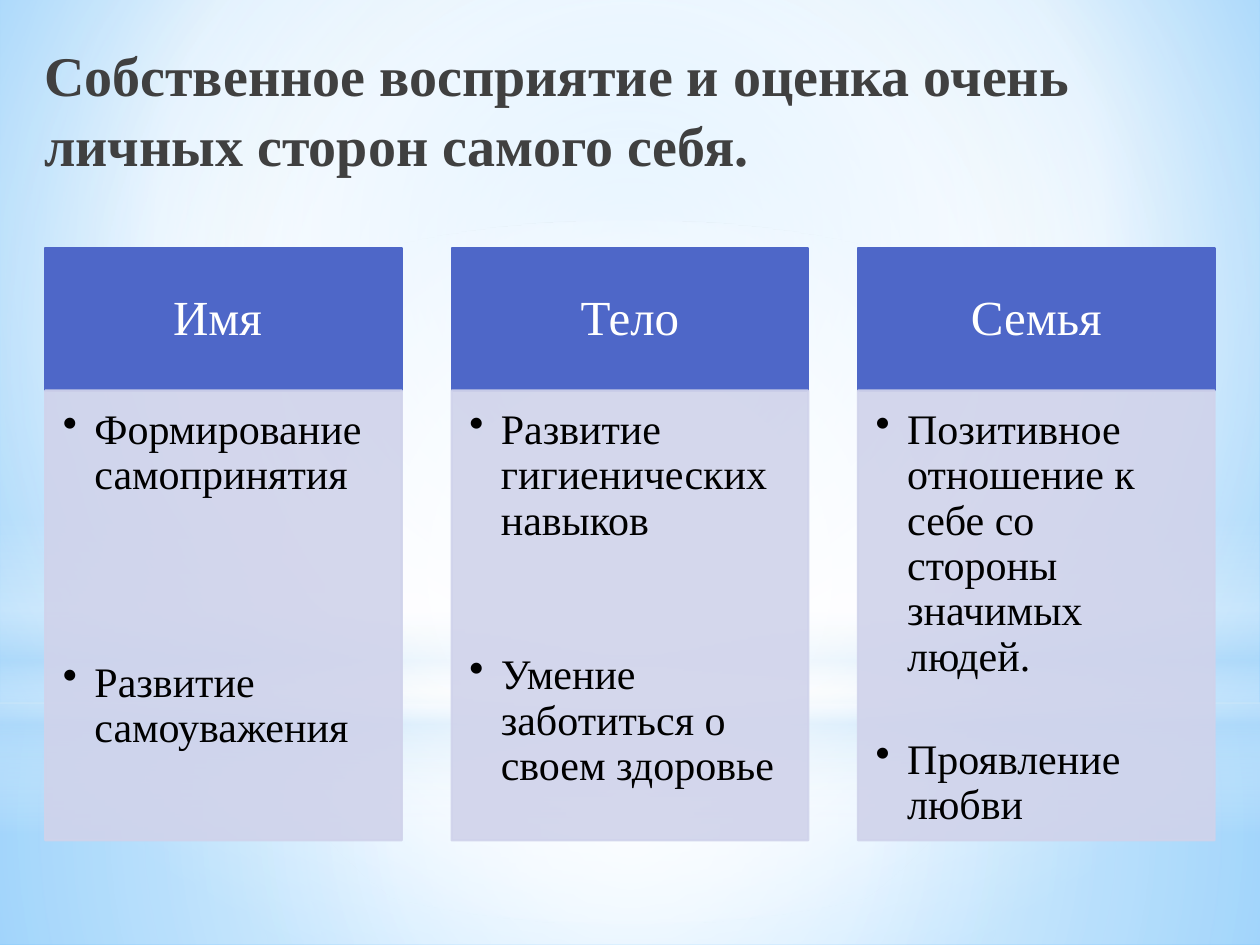
from dataclasses import dataclass

from lxml import etree
from pptx import Presentation
from pptx.dml.color import RGBColor
from pptx.enum.shapes import MSO_SHAPE
from pptx.enum.text import MSO_ANCHOR, PP_ALIGN
from pptx.oxml.ns import qn
from pptx.util import Inches, Pt

RECT, OVAL = MSO_SHAPE.RECTANGLE, MSO_SHAPE.OVAL
TOP, MIDDLE = MSO_ANCHOR.TOP, MSO_ANCHOR.MIDDLE
LEFT, CENTER = PP_ALIGN.LEFT, PP_ALIGN.CENTER


@dataclass
class Theme:
    font: str = "Times New Roman"
    title: str = "404040"
    header: str = "4E67C8"
    panel: str = "D0D3EB"
    white: str = "FFFFFF"
    black: str = "000000"
    mist: str = "B4DCFA"
    sky: str = "9ED5FF"
    deep_sky: str = "5BB9FF"
    title_size: int = 32
    header_size: int = 28
    body_size: int = 24
    panel_alpha: int = 90


def sub(parent, tag, **attrs):
    """Add a drawing element with the given attributes."""
    el = etree.SubElement(parent, qn(tag))
    for name, value in attrs.items():
        el.set(name, str(value))
    return el


def set_alpha(color, percent):
    sub(color, "a:alpha", val=percent * 1000)


def set_gradient(props, stops, focus=None):
    """Turn a solid fill into a circular (focus given) or vertical gradient."""
    solid = props.find(qn("a:solidFill"))
    grad = etree.Element(qn("a:gradFill"), rotWithShape="1")
    gs_list = sub(grad, "a:gsLst")
    for pos, color, alpha in stops:
        gs = sub(gs_list, "a:gs", pos=pos * 1000)
        set_alpha(sub(gs, "a:srgbClr", val=color), alpha)
    if focus:
        circle = sub(grad, "a:path", path="circle")
        sides = {side: pct * 1000 for side, pct in zip("ltrb", focus)}
        sub(circle, "a:fillToRect", **sides)
    else:
        sub(grad, "a:lin", ang=90 * 60000, scaled=0)
    props.replace(solid, grad)


class SlideBuilder:
    def __init__(self, slide, theme):
        self.s = slide
        self.th = theme

    def background(self, stops, focus):
        self.s.background.fill.solid()
        set_gradient(self.s.element.find(".//" + qn("p:bgPr")), stops, focus)

    def shape(self, kind, box, color):
        sp = self.s.shapes.add_shape(kind, *map(Inches, box))
        sp.shadow.inherit = False
        sp.fill.solid()
        sp.fill.fore_color.rgb = RGBColor.from_string(color)
        return sp

    def glow(self, kind, box, stops, focus=None):
        sp = self.shape(kind, box, self.th.white)
        sp.line.fill.background()
        set_gradient(sp.element.spPr, stops, focus)

    def panel(self, box, color, alpha=100):
        sp = self.shape(RECT, box, color)
        sp.line.color.rgb = RGBColor.from_string(color)
        sp.line.width = Pt(1.25)
        if alpha < 100:
            for clr in sp.element.spPr.iter(qn("a:srgbClr")):
                set_alpha(clr, alpha)
        return sp

    def frame(self, sp, insets, anchor=TOP):
        tf = sp.text_frame
        sides = ("margin_left", "margin_top", "margin_right", "margin_bottom")
        fmt = dict(zip(sides, map(Inches, insets)))
        fmt.update(word_wrap=True, vertical_anchor=anchor)
        for name, value in fmt.items():
            setattr(tf, name, value)
        return tf

    def add_text(self, p, text, size, color, bold=False, bullet=False, **fmt):
        if bullet:
            pPr = p._p.get_or_add_pPr()
            pPr.set("marL", str(Inches(0.25)))
            pPr.set("indent", str(-Inches(0.25)))
            sub(pPr, "a:buChar", char="•")
        for name, value in fmt.items():
            setattr(p, name, value)
        r = p.add_run()
        r.text = text
        font = {"name": self.th.font, "size": Pt(size), "bold": bold}
        for name, value in font.items():
            setattr(r.font, name, value)
        r.font.color.rgb = RGBColor.from_string(color)

    def title(self, box, text):
        tb = self.s.shapes.add_textbox(*map(Inches, box))
        tf = self.frame(tb, (0.15, 0.09, 0.1, 0.05))
        self.add_text(tf.paragraphs[0], text, self.th.title_size, self.th.title,
                      bold=True, alignment=LEFT, line_spacing=1.04)

    def header(self, box, text):
        sp = self.panel(box, self.th.header)
        tf = self.frame(sp, (0.22, 0.12, 0.22, 0.12), MIDDLE)
        self.add_text(tf.paragraphs[0], text, self.th.header_size,
                      self.th.white, alignment=CENTER, line_spacing=0.9)

    def bullets(self, box, items, gap):
        sp = self.panel(box, self.th.panel, self.th.panel_alpha)
        tf = self.frame(sp, (0.14, 0.14, 0.19, 0.21))
        for i, text in enumerate(items):
            p = tf.add_paragraph() if i else tf.paragraphs[0]
            self.add_text(p, text, self.th.body_size, self.th.black,
                          bullet=True, alignment=LEFT, line_spacing=0.9,
                          space_before=Pt(gap if i else 0))


# Heading, bullets, space between the bullets in points
COLUMNS = [
    ("Имя ", ["Формирование самопринятия", "Развитие самоуважения"], 92.5),
    ("Тело", ["Развитие гигиенических навыков",
              "Умение заботиться о своем здоровье"], 62.5),
    ("Семья", ["Позитивное отношение к себе со стороны значимых людей.",
               "Проявление любви"], 33),
]


def main():
    prs = Presentation()
    prs.slide_width, prs.slide_height = Inches(10), Inches(7.5)
    th = Theme()
    b = SlideBuilder(prs.slides.add_slide(prs.slide_layouts[6]), th)
    white, mist = th.white, th.mist
    center = (50, 50, 50, 50)

    # Sky background with soft light
    b.background([(0, th.sky, 100), (60, white, 100), (100, th.deep_sky, 100)],
                 (20, 10, 20, 60))
    b.glow(RECT, (0, 5.58, 10, 1.92),
           [(0, white, 91), (37, white, 76), (100, mist, 79)], center)
    b.glow(RECT, (0, 0, 10, 5.58),
           [(0, white, 89), (48, white, 62), (100, mist, 79)], center)
    b.glow(RECT, (0, 4.12, 10, 2.5),
           [(0, white, 0), (29, white, 30), (45, mist, 40),
            (55, white, 26), (65, mist, 60), (100, white, 0)])
    b.glow(OVAL, (0, 1.75, 10, 5.58),
           [(0, white, 100), (56, white, 0)], center)

    # Title
    b.title((0.2, 0.21, 9.45, 1.42),
            "Собственное восприятие и оценка очень личных сторон самого себя.")

    # Three columns between equal side margins: header above bullets
    margin, top, width = 0.36, 1.97, 2.83
    header_h, body_h = 1.13, 3.57
    step = (10 - 2 * margin - width) / (len(COLUMNS) - 1)
    for i, (heading, items, gap) in enumerate(COLUMNS):
        x = margin + i * step
        b.header((x, top, width, header_h), heading)
        b.bullets((x, top + header_h, width, body_h), items, gap)

    prs.save("out.pptx")


if __name__ == "__main__":
    main()
